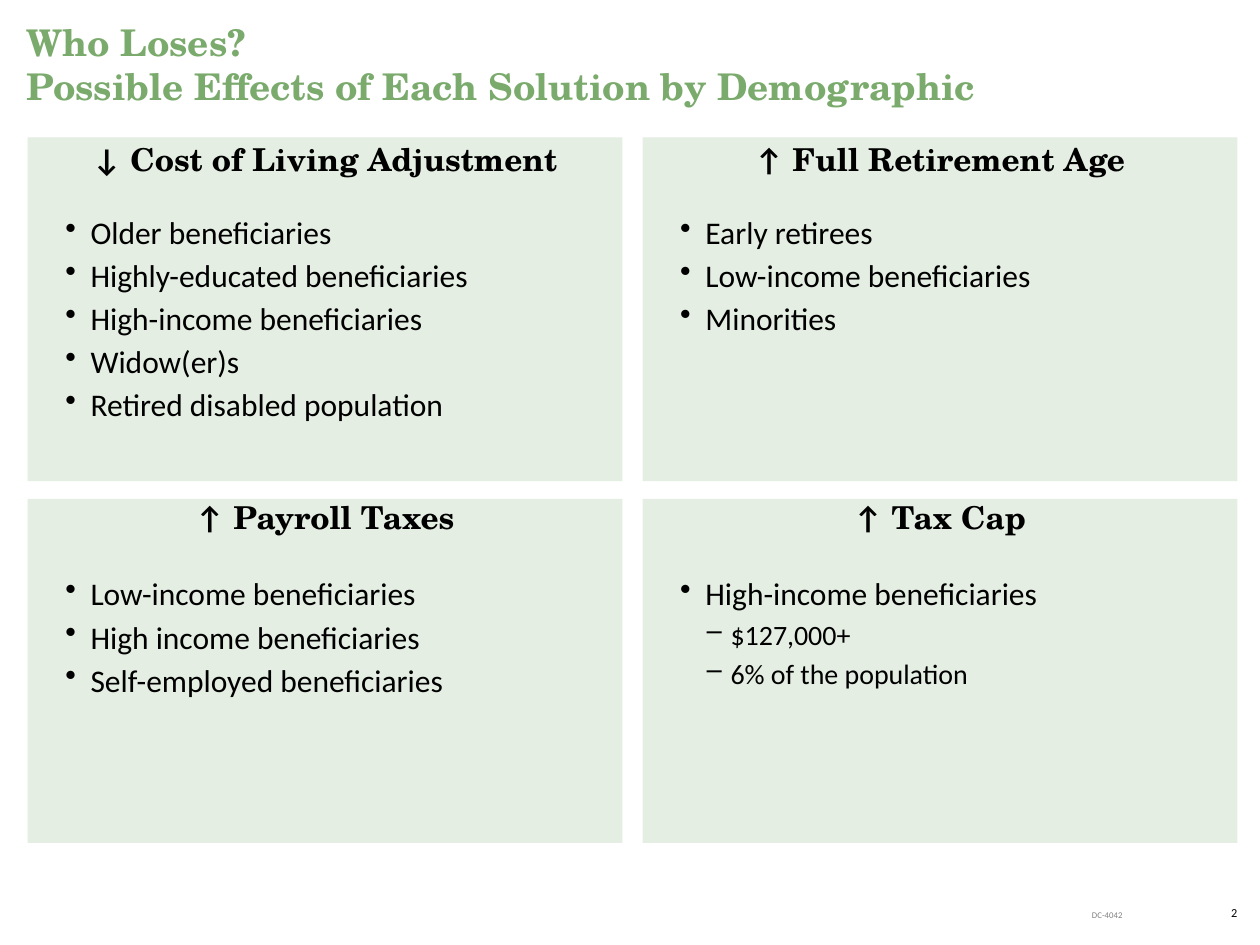
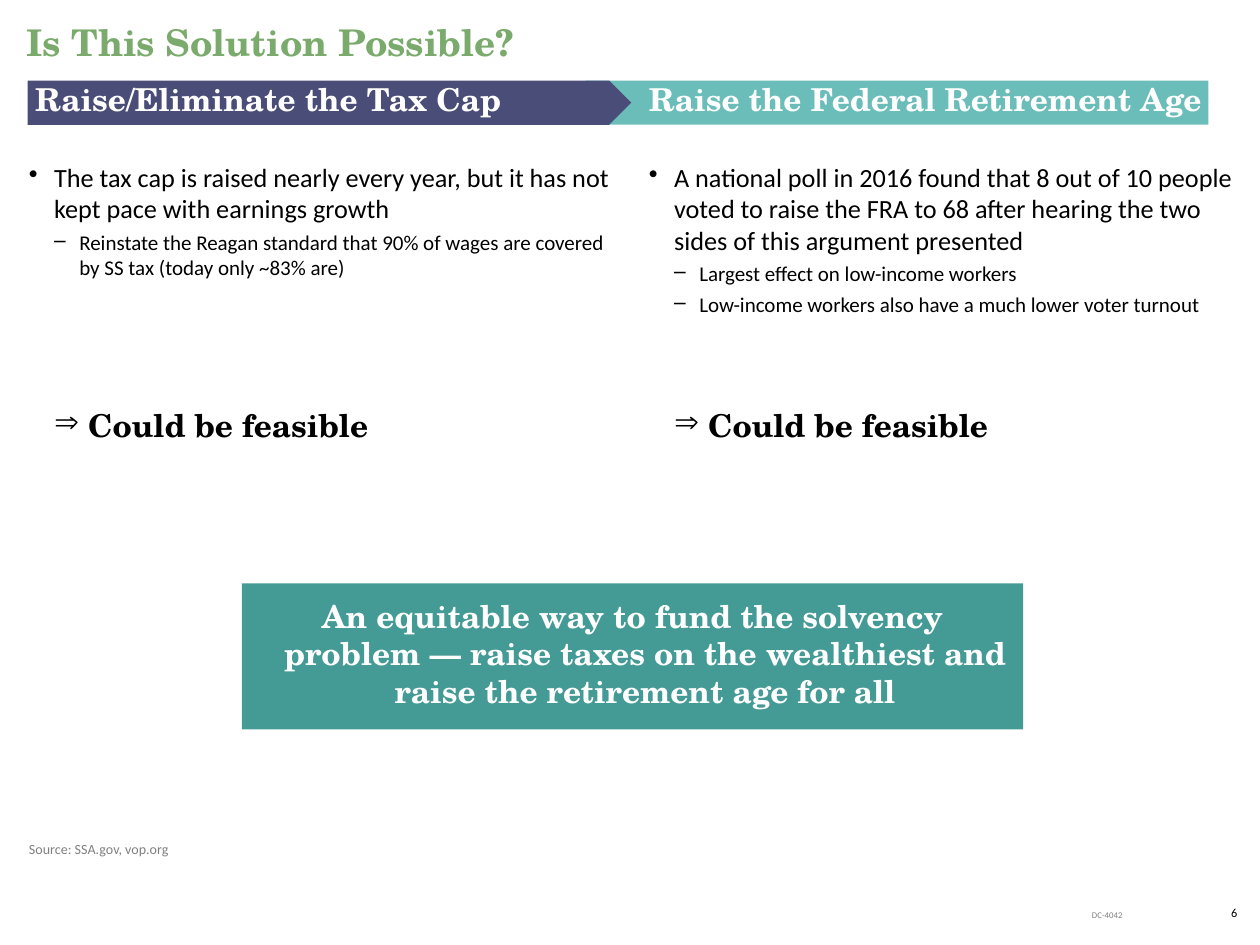
from lxml.etree import SubElement
from pptx import Presentation
from pptx.dml.color import RGBColor
from pptx.enum.shapes import MSO_SHAPE as SHAPE
from pptx.enum.text import MSO_ANCHOR as ANCHOR, PP_ALIGN as ALIGN
from pptx.oxml.ns import qn
from pptx.util import Inches, Pt

SERIF, SANS = "TeX Gyre Schola", "Calibri"
BLACK = RGBColor(0x00, 0x00, 0x00)
WHITE = RGBColor(0xFF, 0xFF, 0xFF)
GRAY = RGBColor(0x80, 0x80, 0x80)
GREEN = RGBColor(0x7A, 0xAA, 0x6C)
PALE_GREEN = RGBColor(0xE4, 0xEE, 0xE2)
AQUA = RGBColor(0x6B, 0xBD, 0xB9)
INDIGO = RGBColor(0x4A, 0x4D, 0x77)
TEAL = RGBColor(0x44, 0x9A, 0x95)

DOCUMENT_CODE = "DC-4042"

# Slide 1: cards row by row, as (arrow, heading, [(level, text)])
LOSERS_TITLE = ["Who Loses?", "Possible Effects of Each Solution by Demographic"]
CARDS = [
    ("↓", "Cost of Living Adjustment", [
        (1, "Older beneficiaries"),
        (1, "Highly-educated beneficiaries"),
        (1, "High-income beneficiaries"),
        (1, "Widow(er)s"),
        (1, "Retired disabled population")]),
    ("↑", "Full Retirement Age", [
        (1, "Early retirees"),
        (1, "Low-income beneficiaries"),
        (1, "Minorities")]),
    ("↑", "Payroll Taxes", [
        (1, "Low-income beneficiaries"),
        (1, "High income beneficiaries"),
        (1, "Self-employed beneficiaries")]),
    ("↑", "Tax Cap", [
        (1, "High-income beneficiaries"),
        (2, "$127,000+"),
        (2, "6% of the population")]),
]
CARD_LEFT, CARD_TOP, CARD_W, CARD_H = 0.22, 1.09, 4.72, 2.73
COLUMN_STEP, ROW_STEP = 4.88, 2.87
HEADING_DROPS = (0.04, 0.01)
CARD_SIZES = {1: 18, 2: 16}

# Slide 2: columns as (left, heading left, heading, [(level, text)])
FEASIBLE_TITLE = ["Is This Solution Possible?"]
SOLUTIONS = [
    (0.23, 0.28, "Raise/Eliminate the Tax Cap", [
        (1, "The tax cap is raised nearly every year, but it has not kept "
            "pace with earnings growth"),
        (2, "Reinstate the Reagan standard that 90% of wages are covered by "
            "SS tax (today only ~83% are)")]),
    (5.15, 5.15, "Raise the Federal Retirement Age", [
        (1, "A national poll in 2016 found that 8 out of 10 people voted to "
            "raise the FRA to 68 after hearing the two sides of this "
            "argument presented"),
        (2, "Largest effect on low-income workers"),
        (2, "Low-income workers also have a much lower voter turnout")]),
]
BANDS = [(SHAPE.RECTANGLE, 4.65, 4.94, AQUA), (SHAPE.PENTAGON, 0.22, 4.79, INDIGO)]
BAND_TOP, BAND_H, SOLUTION_W = 0.64, 0.35, 4.7
SOLUTION_SIZES = {1: 15, 2: 12}
VERDICT = "Could be feasible"
CONCLUSION = ("An equitable way to fund the solvency problem — raise taxes on "
              "the wealthiest and raise the retirement age for all")
SOURCE = "Source: SSA.gov, vop.org"


def set_frame(tf, margins=(0, 0, 0, 0), anchor=ANCHOR.TOP):
    tf.word_wrap = True
    tf.vertical_anchor = anchor
    tf.margin_left, tf.margin_top, tf.margin_right, tf.margin_bottom = map(Inches, margins)
    return tf


def add_box(s, left, top, width, height, anchor=ANCHOR.TOP):
    """Add an unpadded text box and return its text frame."""
    box = s.shapes.add_textbox(*map(Inches, (left, top, width, height)))
    return set_frame(box.text_frame, anchor=anchor)


def add_block(s, kind, left, top, width, height, color):
    """Add a plain filled shape without line or shadow."""
    sp = s.shapes.add_shape(kind, *map(Inches, (left, top, width, height)))
    sp.shadow.inherit = False
    sp.fill.solid()
    sp.fill.fore_color.rgb = color
    sp.line.fill.background()
    return sp


def add_run(p, text, size, color=BLACK, font=SANS, bold=False):
    r = p.add_run()
    r.text = text
    r.font.size, r.font.name, r.font.bold = Pt(size), font, bold
    r.font.color.rgb = color


def set_indent(p, left, first, bullet=None):
    pPr = p._p.get_or_add_pPr()
    pPr.set("marL", str(Inches(left)))
    pPr.set("indent", str(Inches(first)))
    if bullet:
        SubElement(pPr, qn("a:buChar")).set("char", bullet)


def add_bullets(tf, items, sizes, base, dash):
    """Fill a frame with two-level bullets, level 1 indented by base inches."""
    for i, (level, text) in enumerate(items):
        p = tf.add_paragraph() if i else tf.paragraphs[0]
        set_indent(p, base + 0.2 * (level - 1), -0.2, "•" if level == 1 else dash)
        p.alignment = ALIGN.LEFT
        if i:
            p.space_before = Pt(3)
        add_run(p, text, sizes[level])


def add_slide(prs, title_lines, number):
    """Add a slide with the shared title, document code and page number."""
    s = prs.slides.add_slide(prs.slide_layouts[6])
    p = add_box(s, 0.21, 0.16, 9.64, 0.35 * len(title_lines)).paragraphs[0]
    for i, line in enumerate(title_lines):
        if i:
            p.add_line_break()
        add_run(p, line, 21, GREEN, SERIF, True)

    p = add_box(s, 9.62, 7.18, 0.2, 0.12, ANCHOR.MIDDLE).paragraphs[0]
    p.alignment = ALIGN.RIGHT
    add_run(p, str(number), 7)

    p = add_box(s, 7.97, 7.19, 0.94, 0.11).paragraphs[0]
    p.alignment, p.line_spacing = ALIGN.RIGHT, Pt(8)
    add_run(p, DOCUMENT_CODE, 5, GRAY)
    return s


def build_losers(prs):
    s = add_slide(prs, LOSERS_TITLE, 2)
    for i, (arrow, heading, items) in enumerate(CARDS):
        row, column = divmod(i, 2)
        left = CARD_LEFT + column * COLUMN_STEP
        top = CARD_TOP + row * ROW_STEP
        card = add_block(s, SHAPE.RECTANGLE, left, top, CARD_W, CARD_H, PALE_GREEN)
        tf = set_frame(card.text_frame, (0.1, 0.6, 0.1, 0.05))
        add_bullets(tf, items, CARD_SIZES, 0.4, "‒")

        p = add_box(s, left, top + HEADING_DROPS[row], CARD_W, 0.29).paragraphs[0]
        p.alignment, p.line_spacing = ALIGN.CENTER, 0.98
        add_run(p, arrow, 18, bold=True)
        add_run(p, " " + heading, 18, font=SERIF, bold=True)


def build_feasibility(prs):
    s = add_slide(prs, FEASIBLE_TITLE, 6)
    for kind, left, width, color in BANDS:
        add_block(s, kind, left, BAND_TOP, width, BAND_H, color)

    for left, heading_left, heading, items in SOLUTIONS:
        p = add_box(s, heading_left, 0.65, SOLUTION_W, 0.3).paragraphs[0]
        p.line_spacing = 0.98
        add_run(p, heading, 18, WHITE, SERIF, True)

        tf = add_box(s, left, 1.28, SOLUTION_W, 1.3)
        add_bullets(tf, items, SOLUTION_SIZES, 0.2, "–")

        p = add_box(s, left, 3.22, SOLUTION_W, 0.3).paragraphs[0]
        set_indent(p, 0.47, -0.27, "⇒")
        add_run(p, VERDICT, 18, font=SERIF, bold=True)

    banner = add_block(s, SHAPE.RECTANGLE, 1.92, 4.63, 6.2, 1.16, TEAL)
    tf = set_frame(banner.text_frame, (0.1, 0, 0.1, 0.05), ANCHOR.MIDDLE)
    p = tf.paragraphs[0]
    set_indent(p, 0.2, -0.2)
    p.alignment = ALIGN.CENTER
    add_run(p, CONCLUSION, 18, WHITE, SERIF, True)

    p = add_box(s, 0.23, 6.69, 9.58, 0.11, ANCHOR.BOTTOM).paragraphs[0]
    p.line_spacing = Pt(8)
    add_run(p, SOURCE, 8, GRAY)


def main():
    prs = Presentation()
    prs.slide_width, prs.slide_height = Inches(10), Inches(7.5)
    build_losers(prs)
    build_feasibility(prs)
    prs.save("out.pptx")


if __name__ == "__main__":
    main()
